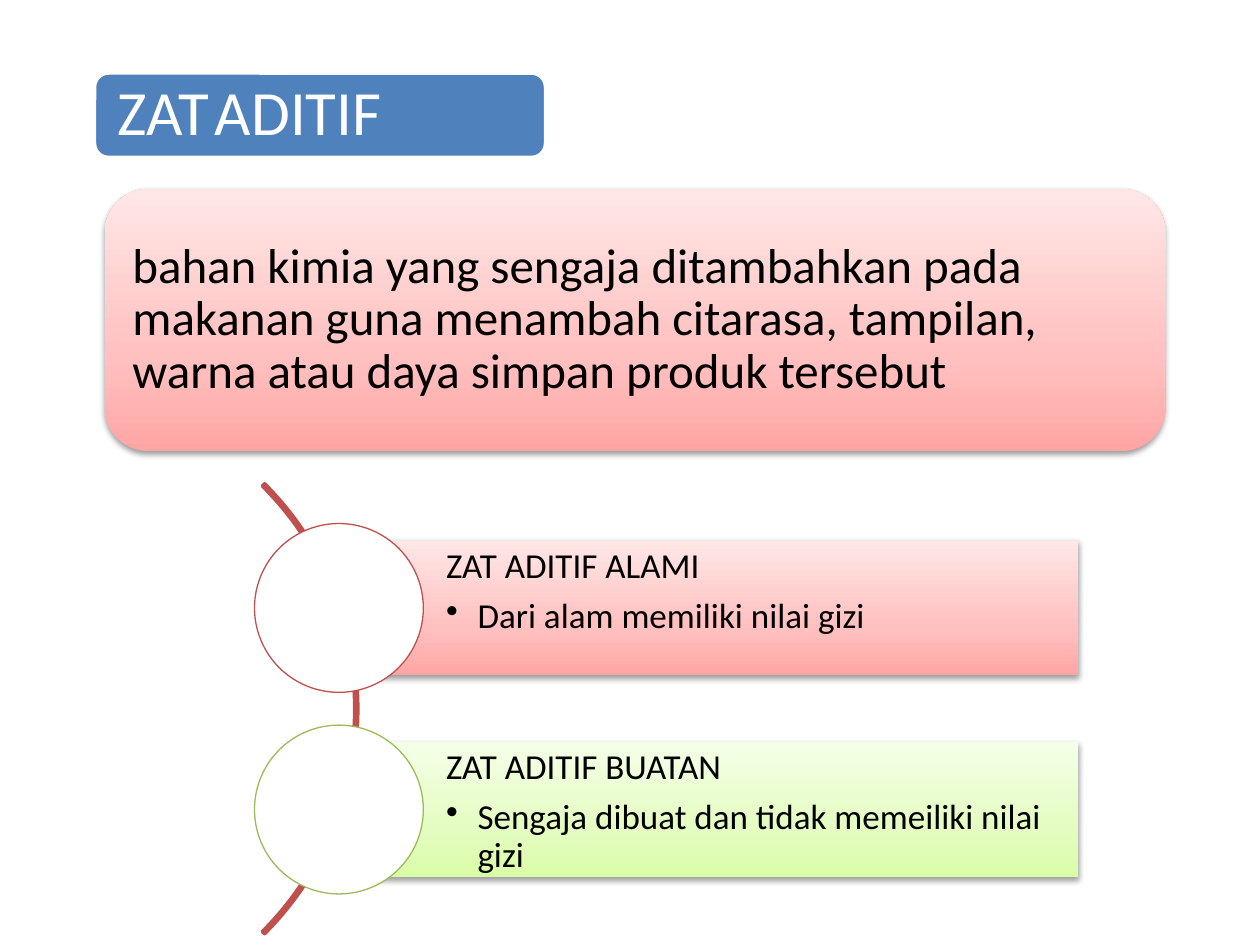
import copy

import lxml.etree
import pptx
import pptx.dml.color
import pptx.enum.shapes
import pptx.enum.text
import pptx.oxml.ns
import pptx.util

Inches = pptx.util.Inches
Pt = pptx.util.Pt
SHAPE = pptx.enum.shapes.MSO_SHAPE
ANCHOR = pptx.enum.text.MSO_ANCHOR
qn = pptx.oxml.ns.qn

FONT = "Calibri"
COLORS = {
    "white": "FFFFFF",
    "black": "000000",
    "blue": "4F81BD",
    "red": "C0504D",
    "green": "9BBB59",
}
GRADIENTS = {
    "red": ((0, "FFA6A5"), (0.35, "FFC0BF"), (1, "FFE7E7")),
    "green": ((0, "DAFDA7"), (0.35, "E4FCC2"), (1, "F5FFE7")),
}


def rgb(value):
    return pptx.dml.color.RGBColor.from_string(value)


def add_shape(slide, kind, box, fill=None, line=None, line_width=1):
    shape = slide.shapes.add_shape(kind, *(Inches(length) for length in box))
    shape.shadow.inherit = False
    if fill:
        shape.fill.solid()
        shape.fill.fore_color.rgb = rgb(COLORS[fill])
    else:
        shape.fill.background()
    if line:
        shape.line.color.rgb = rgb(COLORS[line])
        shape.line.width = Pt(line_width)
    else:
        shape.line.fill.background()
    return shape


def add_panel(slide, kind, box, gradient):
    """Add a shape with an upward gradient and a soft shadow below it."""
    shape = add_shape(slide, kind, box)
    shape.fill.gradient()
    shape.fill.gradient_angle = 90
    stop_list = shape._element.spPr.find(".//" + qn("a:gsLst"))
    stop_list.append(copy.deepcopy(stop_list[-1]))
    for stop, (position, color) in zip(shape.fill.gradient_stops, GRADIENTS[gradient]):
        stop.position = position
        stop.color.rgb = rgb(color)

    effects = shape._element.spPr.find(qn("a:effectLst"))
    shadow = lxml.etree.SubElement(
        effects, qn("a:outerShdw"), blurRad=str(Pt(3.1)), dist=str(Pt(1.6)),
        dir="5400000", rotWithShape="0")
    shadow_color = lxml.etree.SubElement(shadow, qn("a:srgbClr"), val=COLORS["black"])
    lxml.etree.SubElement(shadow_color, qn("a:alpha"), val="38000")
    return shape


def set_frame(shape, margins, anchor):
    """Set the margins (left, top, right, bottom) and anchor of a shape's text."""
    frame = shape.text_frame
    frame.word_wrap = True
    frame.vertical_anchor = anchor
    (frame.margin_left, frame.margin_top,
     frame.margin_right, frame.margin_bottom) = (Inches(margin) for margin in margins)
    return frame


def write_text(paragraph, text, size, color="black", space_after=0, bullet=False):
    """Append a run to the paragraph and format both."""
    paragraph.alignment = pptx.enum.text.PP_ALIGN.LEFT
    paragraph.line_spacing = 0.9
    paragraph.space_after = Pt(space_after)
    if bullet:
        paragraph.level = 1
        properties = paragraph._p.get_or_add_pPr()
        properties.set("marL", str(Inches(0.25)))
        properties.set("indent", str(Inches(-0.25)))
        lxml.etree.SubElement(properties, qn("a:buChar"), char="•")
    run = paragraph.add_run()
    run.text = text
    run.font.name = FONT
    run.font.size = Pt(size)
    run.font.color.rgb = rgb(COLORS[color])


def add_title(slide, box):
    shape = add_shape(slide, SHAPE.ROUNDED_RECTANGLE, box, "blue", "white", 2)
    frame = set_frame(shape, [0.15] * 4, ANCHOR.MIDDLE)
    for text, size in (("ZAT", 36), (" ", 15), ("ADITIF", 36)):
        write_text(frame.paragraphs[0], text, size, color="white")


def add_definition(slide, box):
    shape = add_panel(slide, SHAPE.ROUNDED_RECTANGLE, box, "red")
    frame = set_frame(shape, [0.12] * 4, ANCHOR.MIDDLE)
    write_text(
        frame.paragraphs[0],
        "bahan kimia yang sengaja ditambahkan pada makanan guna menambah "
        "citarasa, tampilan, warna atau daya simpan produk tersebut",
        28, space_after=9.8)


def add_kind(slide, box, heading, detail, color):
    """Add one bar with a circle centred on its left edge."""
    left, top, width, height = box
    bar = add_panel(slide, SHAPE.RECTANGLE, box, color)
    frame = set_frame(bar, (0.85, 0.06, 0.06, 0.06), ANCHOR.TOP)
    write_text(frame.paragraphs[0], heading, 20, space_after=7)
    write_text(frame.add_paragraph(), detail, 20, space_after=3, bullet=True)

    diameter = 1.34
    circle_box = (left - diameter / 2, top + (height - diameter) / 2, diameter, diameter)
    add_shape(slide, SHAPE.OVAL, circle_box, "white", color, 0.75)


def add_kinds(slide, box):
    """Add the curved list: an arc, and the bars at an equal pitch."""
    left, top, width, height = box
    arc_size = 5.05
    arc_box = (left - 4.9, top + (height - arc_size) / 2, arc_size, arc_size)
    arc = add_shape(slide, SHAPE.BLOCK_ARC, arc_box, line="red", line_width=2)
    for index, value in enumerate((189, 27, 0.005)):
        arc.adjustments[index] = value

    bar_height = 1.07
    pitch = height - bar_height
    kinds = (
        ("ZAT ADITIF ALAMI", "Dari alam memiliki nilai gizi", "red"),
        ("ZAT ADITIF BUATAN", "Sengaja dibuat dan tidak memeiliki nilai gizi", "green"),
    )
    for index, kind in enumerate(kinds):
        add_kind(slide, (left, top + index * pitch, width, bar_height), *kind)


def main():
    presentation = pptx.Presentation()
    presentation.slide_width = Inches(10)
    presentation.slide_height = Inches(7.5)
    slide = presentation.slides.add_slide(presentation.slide_layouts[6])
    add_definition(slide, (0.83, 1.5, 8.42, 2.08))
    add_title(slide, (0.75, 0.58, 3.58, 0.67))
    add_kinds(slide, (2.69, 4.29, 5.87, 2.67))
    presentation.save("out.pptx")


if __name__ == "__main__":
    main()
